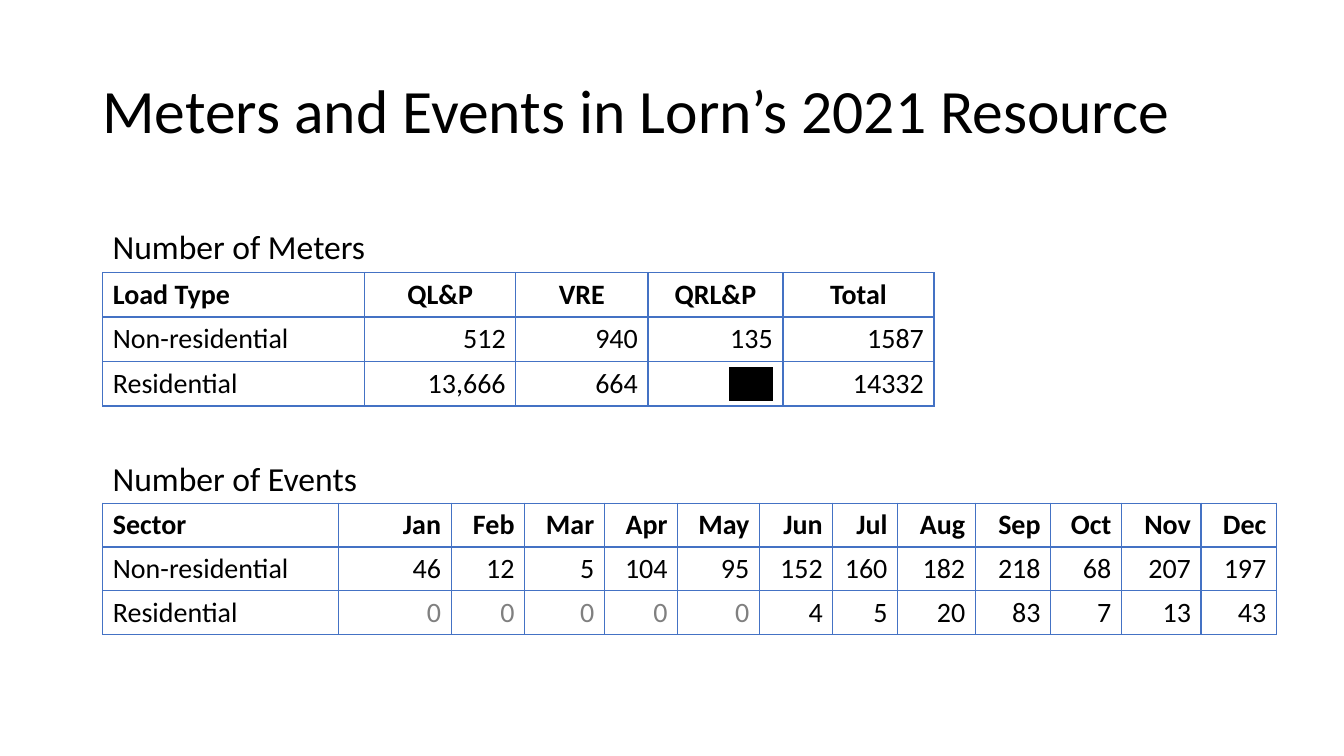
from lxml import etree
from pptx import Presentation
from pptx.dml.color import RGBColor
from pptx.enum.text import MSO_ANCHOR, PP_ALIGN
from pptx.oxml.ns import qn
from pptx.util import Cm, Pt

BLACK = RGBColor(0x00, 0x00, 0x00)
GRAY = RGBColor(0x80, 0x80, 0x80)
BLUE = RGBColor(0x44, 0x72, 0xC4)
LEFT, CENTER, RIGHT = PP_ALIGN.LEFT, PP_ALIGN.CENTER, PP_ALIGN.RIGHT
MIDDLE, BOTTOM = MSO_ANCHOR.MIDDLE, MSO_ANCHOR.BOTTOM
FONT = "Calibri"
EDGE = 2.59
MASK = "XXX"

METERS = [
    ["Load Type", "QL&P", "VRE", "QRL&P", "Total"],
    ["Non-residential", "512", "940", "135", "1587"],
    ["Residential", "13,666", "664", MASK, "14332"],
]
METER_COLS = [6.6, 3.81, 3.33, 3.4, 3.81]
EVENTS = [
    ["Sector", *"Jan Feb Mar Apr May Jun Jul Aug Sep Oct Nov Dec".split()],
    ["Non-residential", *"46 12 5 104 95 152 160 182 218 68 207 197".split()],
    ["Residential", *"0 0 0 0 0 4 5 20 83 7 13 43".split()],
]
EVENT_COLS = [5.94, 2.84, 1.85, 2.01, 1.85, 2.06, 1.85, 1.63, 1.96, 1.9,
              1.78, 2.01, 1.9]


def write(para, text, size, color=BLACK, bold=False):
    run = para.add_run()
    run.text = text
    font = para.font
    font.name, font.size, font.bold = FONT, Pt(size), bold
    font.color.rgb = color
    return run


def add_text(slide, text, left, top, width, height, size, wrap=False):
    frame = slide.shapes.add_textbox(
        Cm(left), Cm(top), Cm(width), Cm(height)).text_frame
    frame.word_wrap = wrap
    frame.vertical_anchor = MIDDLE
    para = frame.paragraphs[0]
    write(para, text, size)
    return para


def add_color(parent, tag, color):
    node = etree.SubElement(parent, qn(tag))
    etree.SubElement(node, qn("a:srgbClr"), val=str(color))


def add_border(cell, head):
    props = cell._tc.get_or_add_tcPr()
    for side in "LRTB":
        width = Pt(2 if head and side == "B" else 1)
        line = etree.SubElement(props, qn("a:ln" + side), w=str(width))
        add_color(line, "a:solidFill", BLUE)


def fill_cell(cell, text, align, anchor, head):
    add_border(cell, head)
    cell.fill.background()
    cell.vertical_anchor = anchor
    para = cell.text_frame.paragraphs[0]
    para.alignment = align
    run = write(para, text, 20, GRAY if text == "0" else BLACK, head)
    if text == MASK:
        add_color(run._r.get_or_add_rPr(), "a:highlight", BLACK)


def add_grid(slide, data, cols, top, height, align, anchor):
    table = slide.shapes.add_table(
        len(data), len(cols), Cm(EDGE), Cm(top), Cm(sum(cols)),
        Cm(height * len(data))).table
    table.horz_banding = False
    for col, width in zip(table.columns, cols):
        col.width = Cm(width)
    for r, row in enumerate(data):
        table.rows[r].height = Cm(height)
        for c, text in enumerate(row):
            head = r == 0
            side = LEFT if c == 0 else align if head else RIGHT
            fill_cell(table.cell(r, c), text, side,
                      anchor if head and c else BOTTOM, head)


def main():
    deck = Presentation()
    deck.slide_width, deck.slide_height = Cm(33.87), Cm(19.05)
    slide = deck.slides.add_slide(deck.slide_layouts[6])
    title = add_text(slide, "Meters and Events in Lorn’s 2021 Resource",
                     2.33, 1.02, 29.21, 3.68, 44, True)
    title.line_spacing = 0.9
    add_grid(slide, METERS, METER_COLS, 6.87, 1.12, CENTER, BOTTOM)
    add_text(slide, "Number of Meters", EDGE, 5.57, 6.93, 1.28, 24)
    add_grid(slide, EVENTS, EVENT_COLS, 12.68, 1.1, RIGHT, MIDDLE)
    add_text(slide, "Number of Events", EDGE, 11.41, 6.73, 1.28, 24)
    deck.save("out.pptx")


if __name__ == "__main__":
    main()
